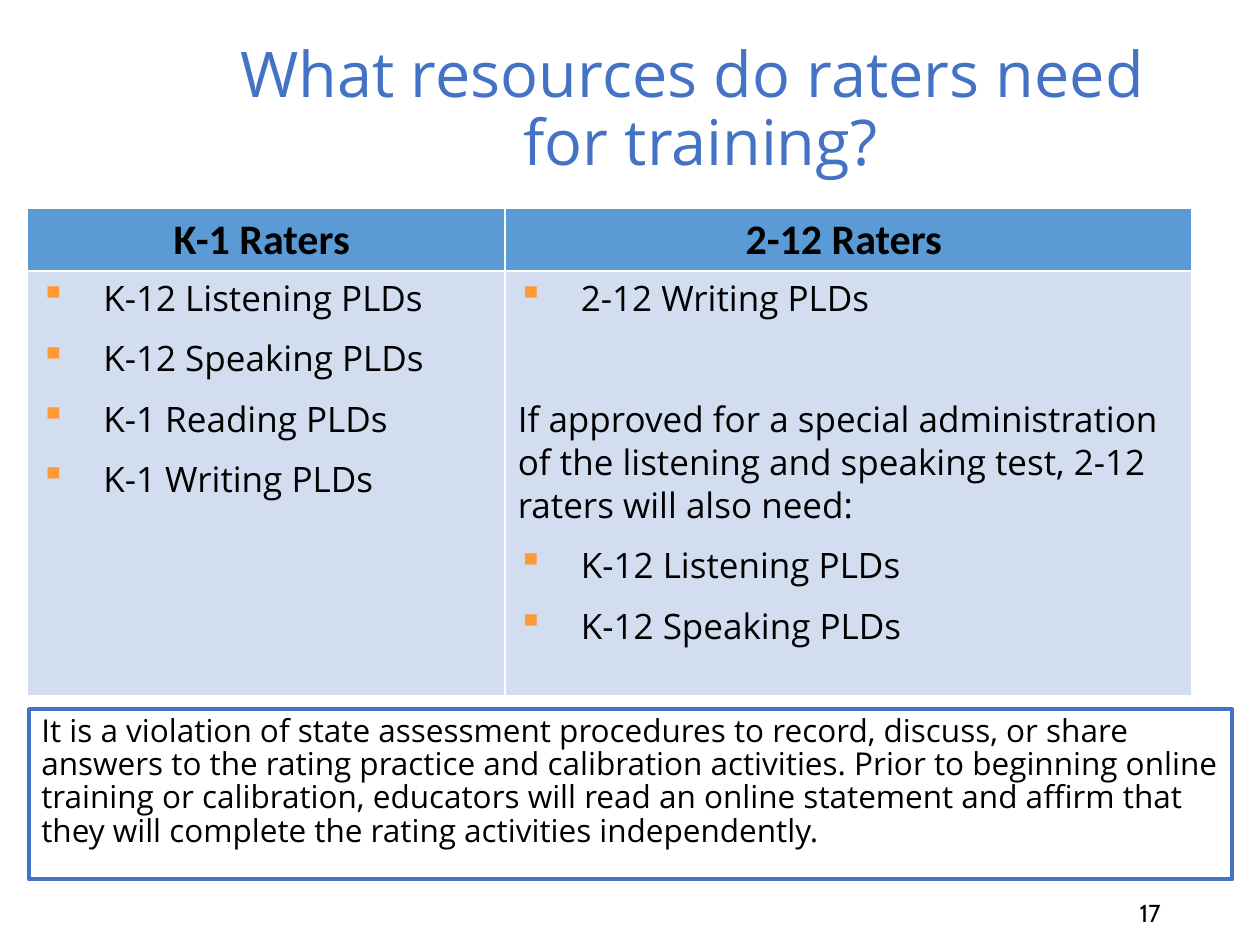
from pptx import Presentation
from pptx.dml.color import RGBColor as RGB
from pptx.enum.shapes import MSO_SHAPE as Shape
from pptx.enum.text import MSO_ANCHOR as Anchor, PP_ALIGN as Align
from pptx.oxml import parse_xml
from pptx.oxml.ns import nsdecls
from pptx.util import Inches, Pt

THEME = {
    "blue": RGB(0x44, 0x72, 0xC4),
    "header": RGB(0x5B, 0x9B, 0xD5),
    "body": RGB(0xD2, 0xDE, 0xEF),
    "black": RGB(0, 0, 0),
    "bullet": "FF9933",
    "title_pt": 36, "header_pt": 24, "list_pt": 20, "note_pt": 18, "number_pt": 14,
    "text_font": "Open Sans", "header_font": "Calibri", "number_font": "Cabin",
}

# The slide is a grid of 100 columns by 75 rows
COLUMNS, ROWS = 100, 75
UNIT = Inches(0.1)


def grid(*cells):
    return [round(cell * UNIT) for cell in cells]


def style(paragraph, size, color="black", font="text_font", bold=False, align=Align.LEFT):
    paragraph.alignment = align
    for run in paragraph.runs:
        run.font.size = Pt(THEME[size])
        run.font.name = THEME[font]
        run.font.bold = bold
        run.font.color.rgb = THEME[color]


deck = Presentation()
deck.slide_width, deck.slide_height = grid(COLUMNS, ROWS)
slide = deck.slides.add_slide(deck.slide_layouts[6])

# Title
title = slide.shapes.add_textbox(*grid(8.6, 4, 94, 9.7)).text_frame
title.word_wrap = True
title.vertical_anchor = Anchor.MIDDLE
title.text = "What resources do raters need \vfor training?"
title.paragraphs[0].line_spacing = 0.9
style(title.paragraphs[0], "title_pt", "blue", align=Align.CENTER)

# Resources for each group of raters: (text, bulleted, points before)
GAP = 10
SECTION_GAP = 44.5
resources = {
    "K-1 Raters ": [
        ("K-12 Listening PLDs", True, 0),
        ("K-12 Speaking PLDs", True, GAP),
        ("K-1 Reading PLDs", True, GAP),
        ("K-1 Writing PLDs", True, GAP),
    ],
    "2-12 Raters ": [
        ("2-12 Writing PLDs", True, 0),
        ("If approved for a special administration of the listening and "
         "speaking test, 2-12 raters will also need:", False, SECTION_GAP),
        ("K-12 Listening PLDs", True, GAP),
        ("K-12 Speaking PLDs", True, GAP),
    ],
}
group_widths = grid(37.9, 54.5)
row_heights = grid(5, 33.7)
table = slide.shapes.add_table(
    2, 2, *grid(2.2, 16.5), sum(group_widths), sum(row_heights)).table
table.horz_banding = False
for row, height in zip(table.rows, row_heights):
    row.height = height

for col, (group, items) in enumerate(resources.items()):
    table.columns[col].width = group_widths[col]
    heading, listing = table.cell(0, col), table.cell(1, col)
    for cell, fill in ((heading, "header"), (listing, "body")):
        cell.fill.solid()
        cell.fill.fore_color.rgb = THEME[fill]

    heading.text = group
    style(heading.text_frame.paragraphs[0], "header_pt", font="header_font",
          bold=True, align=Align.CENTER)

    listing.text = "\n".join(text for text, _, _ in items)
    for paragraph, (_, bulleted, before) in zip(listing.text_frame.paragraphs, items):
        paragraph.line_spacing = 0.9
        paragraph.space_before = Pt(before)
        if bulleted:
            props = paragraph._p.get_or_add_pPr()
            props.set("marL", str(Inches(0.5)))
            props.set("indent", str(-Inches(0.5)))
            props.append(parse_xml(
                f'<a:buClr {nsdecls("a")}><a:srgbClr val="{THEME["bullet"]}"/></a:buClr>'))
            props.append(parse_xml(f'<a:buChar {nsdecls("a")} char="▪"/>'))
        style(paragraph, "list_pt")

# Framed notice on rating procedures
notice = slide.shapes.add_shape(Shape.RECTANGLE, *grid(2.3, 56.3, 95.5, 13.5))
notice.shadow.inherit = False
notice.fill.background()
notice.line.color.rgb = THEME["blue"]
notice.line.width = Pt(2.25)
notice.text_frame.word_wrap = True
notice.text_frame.vertical_anchor = Anchor.TOP
notice.text_frame.text = (
    "It is a violation of state assessment procedures to record, discuss, or share\n"
    "answers to the rating practice and calibration activities. Prior to beginning "
    "online training or calibration, educators will read an online statement and "
    "affirm that they will complete the rating activities independently.")
for paragraph in notice.text_frame.paragraphs:
    paragraph.line_spacing = 0.88
    style(paragraph, "note_pt")

# Slide number
number = slide.shapes.add_textbox(*grid(70.6, 71.4, 22.5, 2.1)).text_frame
number.word_wrap = True
number.vertical_anchor = Anchor.MIDDLE
number.text = "17"
style(number.paragraphs[0], "number_pt", font="number_font", align=Align.RIGHT)

deck.save("out.pptx")
